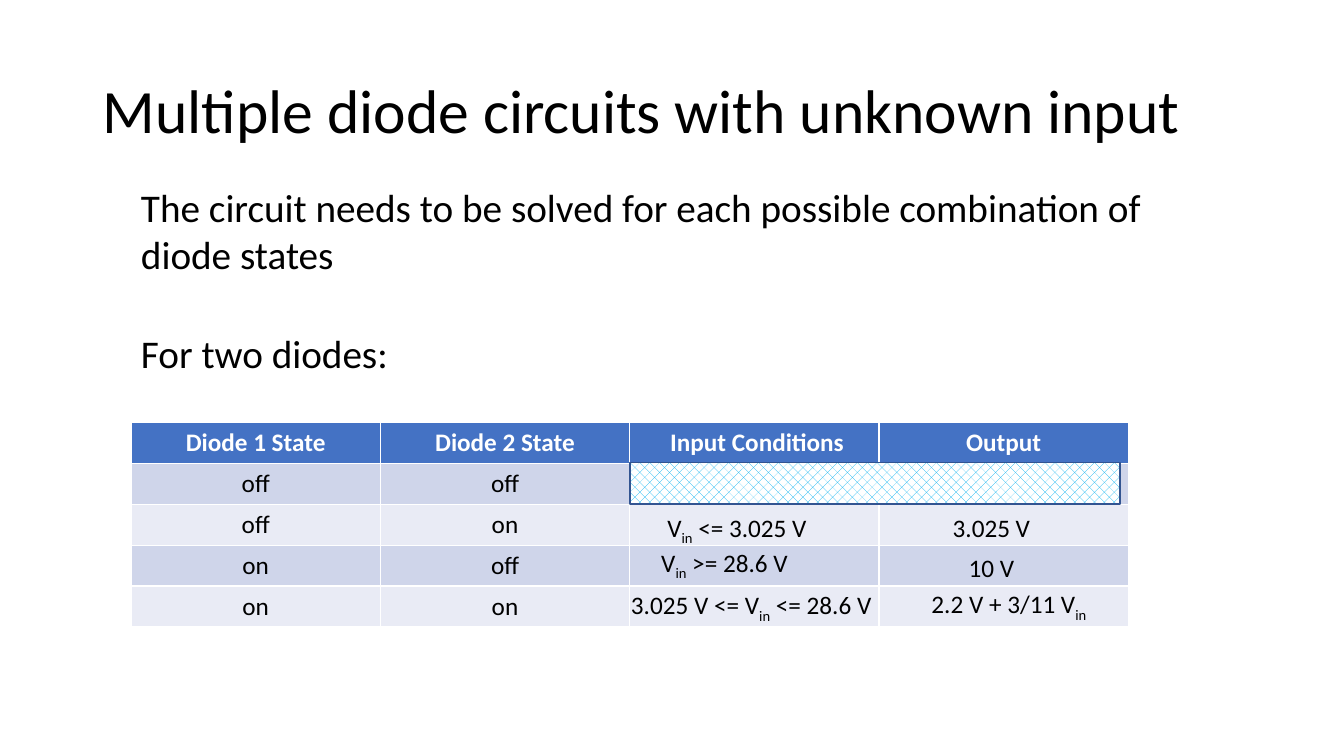
from pptx import Presentation
from pptx.dml.color import RGBColor
from pptx.enum import dml, shapes, text
from pptx.util import Inches, Pt

BLACK = RGBColor(0x00, 0x00, 0x00)
WHITE = RGBColor(0xFF, 0xFF, 0xFF)
HEADER_BLUE = RGBColor(0x44, 0x72, 0xC4)
BAND_DARK = RGBColor(0xCF, 0xD5, 0xEA)
BAND_LIGHT = RGBColor(0xE9, 0xEB, 0xF5)
HATCH_BLUE = RGBColor(0x00, 0xB0, 0xF0)
OUTLINE_BLUE = RGBColor(0x32, 0x54, 0x91)


def add_span(para, words, size, color=BLACK, bold=False):
    span = para.add_run()
    span.text = words
    for name, value in {"name": "Calibri", "size": Pt(size), "bold": bold}.items():
        setattr(span.font, name, value)
    span.font.color.rgb = color
    return span


def add_label(place, words, size, wrap=True):
    """Add a text box; every second part between underscores is a subscript."""
    box = page.shapes.add_textbox(*map(Inches, place))
    box.text_frame.word_wrap = wrap
    for index, part in enumerate(words.split("_")):
        if part:
            span = add_span(box.text_frame.paragraphs[0], part, size)
            if index % 2:
                span._r.get_or_add_rPr().set("baseline", "-25000")


deck = Presentation()
deck.slide_width, deck.slide_height = Inches(13.33), Inches(7.5)
page = deck.slides.add_slide(deck.slide_layouts[5])

title = page.shapes.title
title_place = {"left": 0.92, "top": 0.4, "width": 11.5, "height": 1.45}
for name, value in title_place.items():
    setattr(title, name, Inches(value))
title.text_frame.vertical_anchor = text.MSO_ANCHOR.MIDDLE
para = title.text_frame.paragraphs[0]
para.alignment = text.PP_ALIGN.LEFT
para.line_spacing = 0.9
add_span(para, "Multiple diode circuits with unknown input", 44)

add_label(
    (1.3, 1.77, 10.52, 1.04),
    "The circuit needs to be solved for each possible combination of diode states",
    28,
)
add_label((1.3, 3.22, 3.91, 0.57), "For two diodes:", 28)

# Diode states
rows = [
    ("Diode 1 State", "Diode 2 State", " Input Conditions", "Output"),
    ("off", "off", "", ""),
    ("off", "on", "", ""),
    ("on", "off", "", ""),
    ("on", "on", "", ""),
]
table = page.shapes.add_table(
    5, 4, Inches(1.3), Inches(4.19), Inches(9.89), Inches(2.03)
).table
for row_index, row in enumerate(rows):
    header = row_index == 0
    band = BAND_DARK if row_index % 2 else BAND_LIGHT
    for column_index, words in enumerate(row):
        cell = table.cell(row_index, column_index)
        cell.fill.solid()
        cell.fill.fore_color.rgb = HEADER_BLUE if header else band
        para = cell.text_frame.paragraphs[0]
        para.alignment = text.PP_ALIGN.CENTER
        if words:
            add_span(para, words, 18, WHITE if header else BLACK, header)

# Impossible combination
blocked = page.shapes.add_shape(
    shapes.MSO_SHAPE.RECTANGLE, Inches(6.25), Inches(4.59), Inches(4.86), Inches(0.41)
)
blocked.shadow.inherit = False
blocked.fill.patterned()
blocked.fill.pattern = dml.MSO_PATTERN.PERCENT_30
blocked.fill.fore_color.rgb = HATCH_BLUE
blocked.fill.back_color.rgb = WHITE
blocked.line.color.rgb = OUTLINE_BLUE
blocked.line.width = Pt(1)

# Input conditions and outputs laid over the table
answers = [
    (9.14, 5.79, 1.77, "2.2 V + 3/11 V_in_", False),
    (6.46, 5.38, 1.62, "V_in_ >= 28.6 V", True),
    (9.51, 5.43, 0.66, "10 V", False),
    (9.35, 5.03, 0.98, "3.025 V", False),
    (6.52, 5.03, 1.62, "V_in_ <= 3.025 V", True),
    (6.16, 5.8, 2.76, "3.025 V <= V_in_ <= 28.6 V", True),
]
for left, top, width, words, wrap in answers:
    add_label((left, top, width, 0.4), words, 18, wrap)

deck.save("out.pptx")
